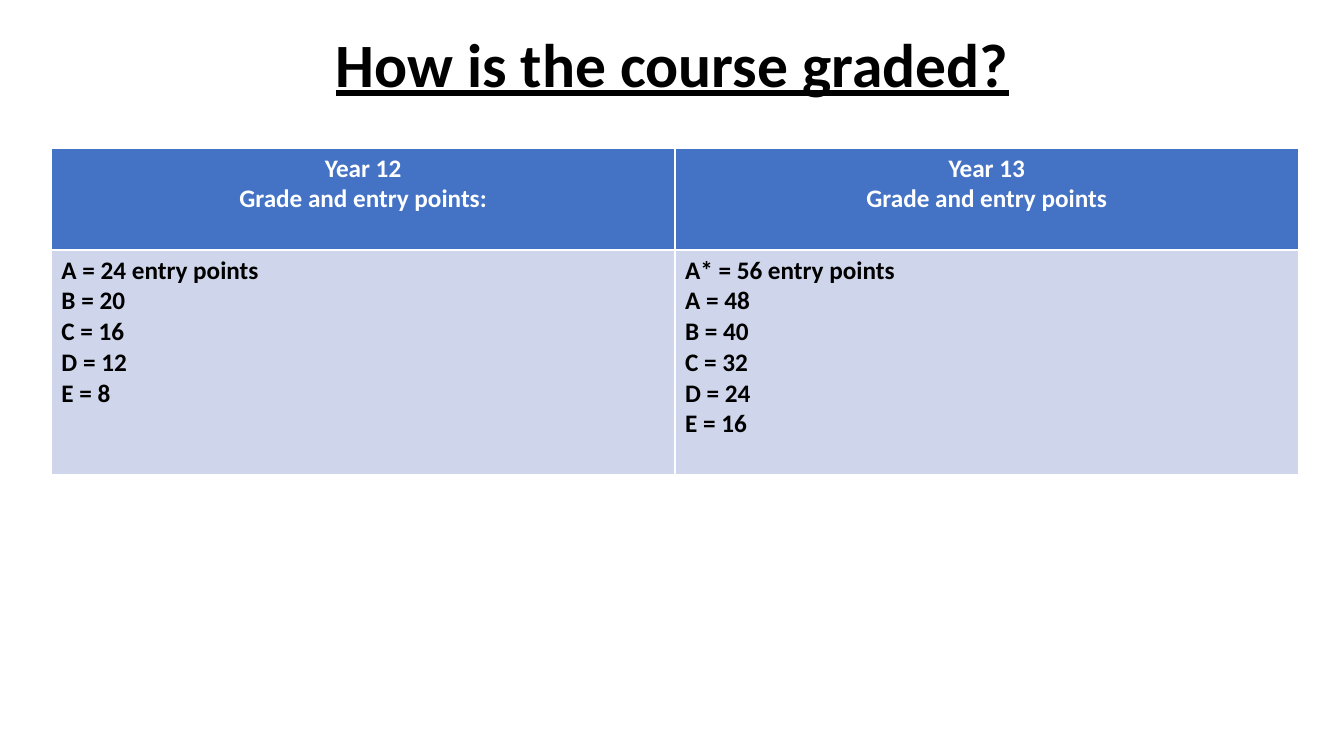
from pptx import Presentation
from pptx.dml.color import RGBColor
from pptx.enum.text import MSO_ANCHOR, PP_ALIGN
from pptx.util import Inches, Pt

TITLE = "How is the course graded?"
HEADINGS = ["Year 12\nGrade and entry points:", "Year 13\nGrade and entry points"]
GRADES = [
    "A = 24 entry points\nB = 20\nC = 16\nD = 12\nE = 8",
    "A* = 56 entry points\nA = 48\nB = 40\nC = 32\nD = 24\nE = 16",
]


def colour(value):
    return RGBColor.from_string(value)


def format_text(frame, size, text_colour, alignment, underline=None):
    for para in frame.paragraphs:
        para.alignment = alignment
        for span in para.runs:
            span.font.name = "Calibri"
            span.font.size = Pt(size)
            span.font.bold = True
            span.font.underline = underline
            span.font.color.rgb = colour(text_colour)


def add_title(page, left, top, width, height):
    box = page.shapes.add_textbox(Inches(left), Inches(top), Inches(width), Inches(height))
    frame = box.text_frame
    frame.word_wrap = True
    frame.vertical_anchor = MSO_ANCHOR.MIDDLE
    frame.text = TITLE
    frame.paragraphs[0].line_spacing = 0.9
    format_text(frame, 44, "000000", PP_ALIGN.CENTER, underline=True)


def add_grade_table(page, left, top, width, row_heights):
    rows = [
        (HEADINGS, "4472C4", "FFFFFF", PP_ALIGN.CENTER),
        (GRADES, "CFD5EA", "000000", PP_ALIGN.LEFT),
    ]
    table = page.shapes.add_table(
        len(rows), len(HEADINGS), Inches(left), Inches(top), Inches(width), Inches(sum(row_heights))
    ).table
    for row, height in zip(table.rows, row_heights):
        row.height = Inches(height)
    for row, (texts, fill, text_colour, alignment) in zip(table.rows, rows):
        for cell, text in zip(row.cells, texts):
            cell.text_frame.text = text
            cell.fill.solid()
            cell.fill.fore_color.rgb = colour(fill)
            format_text(cell.text_frame, 18, text_colour, alignment)


def main():
    deck = Presentation()
    deck.slide_width, deck.slide_height = Inches(13.33), Inches(7.5)
    page = deck.slides.add_slide(deck.slide_layouts[6])
    add_title(page, 0.92, 0.19, 11.5, 0.95)
    add_grade_table(page, 0.51, 1.47, 12.37, [1.01, 2.23])
    deck.save("out.pptx")


if __name__ == "__main__":
    main()
